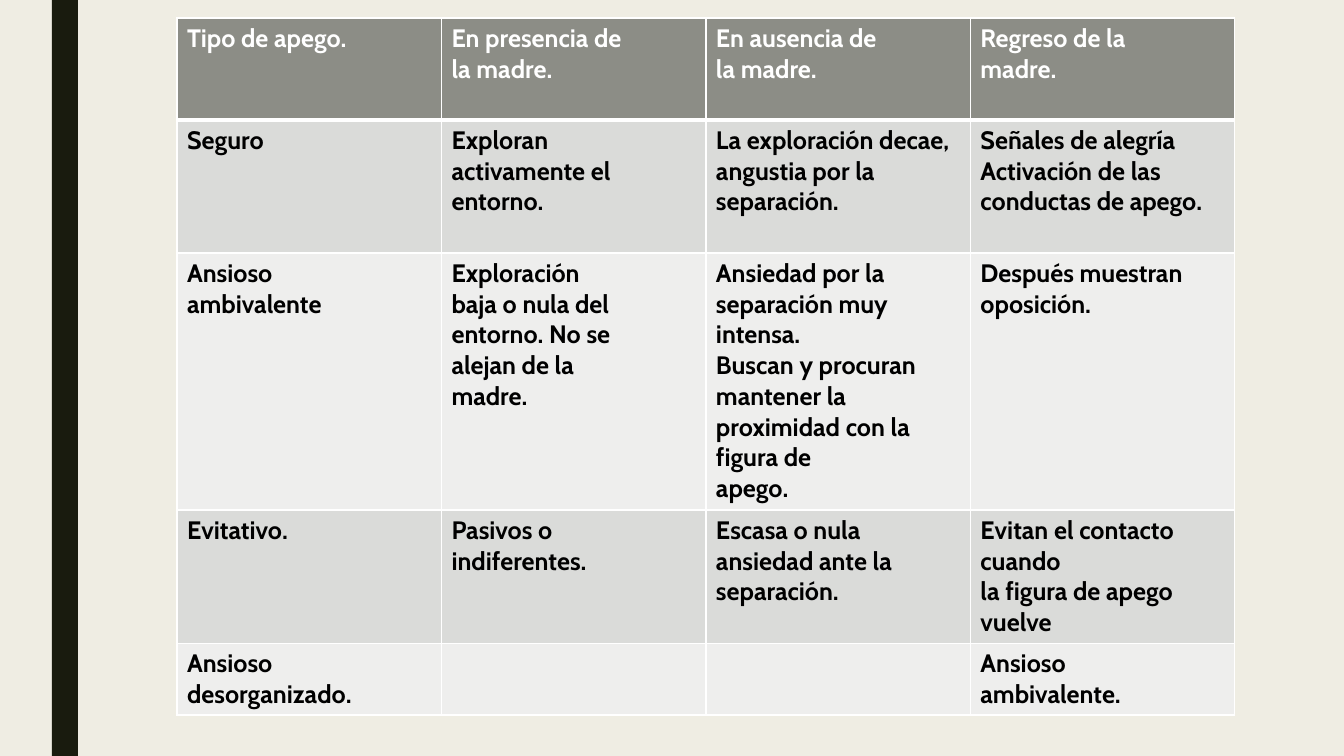
from dataclasses import dataclass

from lxml.etree import SubElement
from pptx import Presentation
from pptx.dml.color import RGBColor
from pptx.enum.shapes import MSO_SHAPE
from pptx.oxml.ns import qn
from pptx.util import Pt

ROWS = [
    ["Tipo de apego.", "En presencia de\nla madre.", "En ausencia de\nla madre.",
     "Regreso de la\nmadre."],
    ["Seguro", "Exploran\nactivamente el\nentorno.",
     "La exploración decae, angustia por la\nseparación.",
     "Señales de alegría\nActivación de las conductas de apego."],
    ["Ansioso\nambivalente",
     "Exploración\nbaja o nula del\nentorno. No se\nalejan de la\nmadre.",
     "Ansiedad por la separación muy intensa.\n"
     "Buscan y procuran mantener la proximidad con la figura de\napego.",
     "Después muestran oposición."],
    ["Evitativo.", "Pasivos o\nindiferentes.",
     "Escasa o nula ansiedad ante la separación.",
     "Evitan el contacto cuando\nla figura de apego vuelve"],
    ["Ansioso\ndesorganizado.", "", "", "Ansioso\nambivalente."],
]
ROW_HEIGHTS = [102, 133, 257, 133, 72]
SLIDE_SIZE = (1344, 756)
SIDE_BAR = (52, 0, 26, 756)
TABLE_LEFT, TABLE_TOP, TABLE_WIDTH = 177, 18, 1058


@dataclass(frozen=True)
class Theme:
    font: str = "Cabin"
    size: int = 18
    background: str = "EFEDE3"
    bar: str = "191B0E"
    header: str = "8C8D86"
    bands: tuple = ("DADBD9", "EEEEED")
    header_text: str = "FFFFFF"
    body_text: str = "000000"
    border: str = "FFFFFF"
    thin: int = 1
    thick: int = 3


THEME = Theme()


def px(length):
    return round(length * 914400 / 100.8)


def paint(fill, color):
    fill.solid()
    fill.fore_color.rgb = RGBColor.from_string(color)


def write(text_frame, text, *, color, size=THEME.size, bold=True):
    text_frame.text = text
    for paragraph in text_frame.paragraphs:
        font = paragraph.font
        for run in paragraph.runs:
            font = run.font
        font.name, font.size, font.bold = THEME.font, Pt(size), bold
        font.color.rgb = RGBColor.from_string(color)


def set_borders(cell, top, bottom):
    """Draw the four cell borders; side borders are always thin."""
    properties = cell._tc.get_or_add_tcPr()
    widths = {"L": THEME.thin, "R": THEME.thin, "T": top, "B": bottom}
    for position, (side, width) in enumerate(widths.items()):
        line = SubElement(properties, qn(f"a:ln{side}"), w=str(Pt(width)))
        solid = SubElement(line, qn("a:solidFill"))
        SubElement(solid, qn("a:srgbClr"), val=THEME.border)
        properties.insert(position, line)


def add_side_bar(slide):
    bar = slide.shapes.add_shape(MSO_SHAPE.RECTANGLE, *map(px, SIDE_BAR))
    bar.shadow.inherit = False
    paint(bar.fill, THEME.bar)
    bar.line.fill.background()


def add_attachment_table(slide):
    column_count = len(ROWS[0])
    table = slide.shapes.add_table(
        len(ROWS), column_count, px(TABLE_LEFT), px(TABLE_TOP),
        px(TABLE_WIDTH), px(sum(ROW_HEIGHTS))).table
    for column in table.columns:
        column.width = px(TABLE_WIDTH / column_count)
    for row_index, texts in enumerate(ROWS):
        table.rows[row_index].height = px(ROW_HEIGHTS[row_index])
        is_header = row_index == 0
        fill = THEME.header if is_header else THEME.bands[(row_index - 1) % 2]
        color = THEME.header_text if is_header else THEME.body_text
        top = THEME.thick if row_index == 1 else THEME.thin
        bottom = THEME.thick if is_header else THEME.thin
        for column_index, text in enumerate(texts):
            cell = table.cell(row_index, column_index)
            paint(cell.fill, fill)
            set_borders(cell, top, bottom)
            write(cell.text_frame, text, color=color)


def main():
    presentation = Presentation()
    presentation.slide_width, presentation.slide_height = map(px, SLIDE_SIZE)
    slide = presentation.slides.add_slide(presentation.slide_layouts[6])
    paint(slide.background.fill, THEME.background)
    add_side_bar(slide)
    add_attachment_table(slide)
    presentation.save("out.pptx")


if __name__ == "__main__":
    main()
